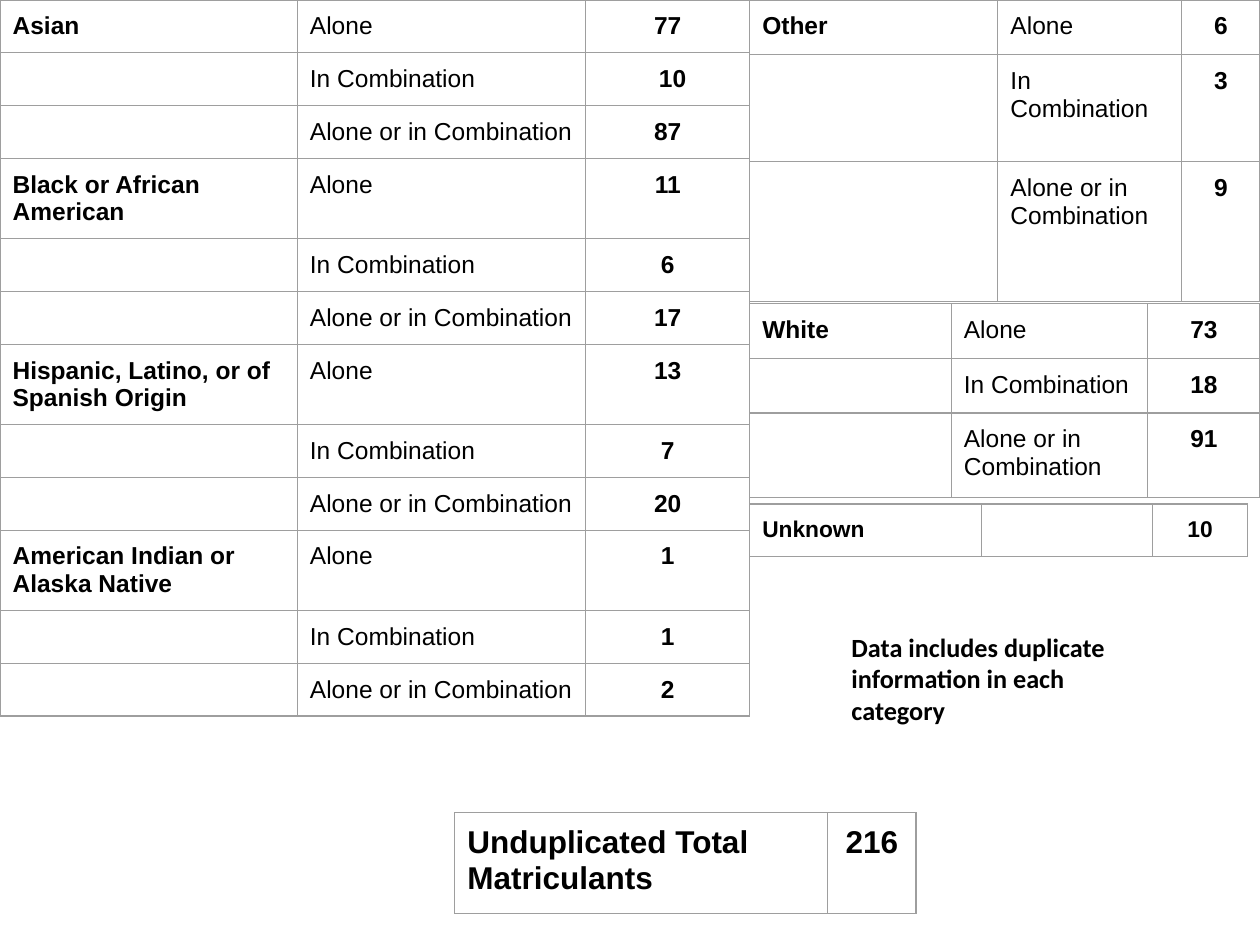
from lxml import etree
from pptx import Presentation
from pptx.dml.color import RGBColor
from pptx.enum.text import MSO_AUTO_SIZE as AutoSize, PP_ALIGN as Align
from pptx.oxml.ns import qn
from pptx.util import Inches, Pt

BLACK = RGBColor(0x00, 0x00, 0x00)
GRAY = RGBColor(0x9E, 0x9E, 0x9E)
KINDS = ["Alone", "In Combination", "Alone or in Combination"]


def group_rows(name, counts):
    """Three rows for one group, named only in the first."""
    return list(zip([name, "", ""], KINDS, counts))


def add_grid(slide, left, top, widths, heights, rows, size):
    """Unfilled table: bold names, plain kinds, bold centred counts."""
    table = slide.shapes.add_table(
        len(heights), len(widths), Inches(left), Inches(top),
        Inches(sum(widths)), Inches(sum(heights))).table
    table.first_row = table.horz_banding = False
    for column, width in zip(table.columns, widths):
        column.width = Inches(width)
    for row, height in zip(table.rows, heights):
        row.height = Inches(height)
    for r, values in enumerate(rows):
        for c, value in enumerate(values):
            cell = table.cell(r, c)
            cell.margin_left = cell.margin_right = Inches(0.1)
            cell.margin_top = cell.margin_bottom = Inches(0.1)
            # Borders come before the fill in the cell properties
            properties = cell._tc.get_or_add_tcPr()
            for side in ("a:lnL", "a:lnR", "a:lnT", "a:lnB"):
                line = etree.SubElement(properties, qn(side), w=str(Pt(0.75)))
                paint = etree.SubElement(line, qn("a:solidFill"))
                etree.SubElement(paint, qn("a:srgbClr"), val=str(GRAY))
            cell.fill.background()
            cell.text = value
            para = cell.text_frame.paragraphs[0]
            para.alignment = Align.CENTER if c == 2 else Align.LEFT
            para.font.name = "Arial"
            para.font.size = Pt(size)
            para.font.bold = c != 1
            para.font.color.rgb = BLACK
            if not value:
                # Keeps an empty cell from stretching its row
                para._p.get_or_add_endParaRPr().set("sz", str(size * 100))
    return table


deck = Presentation()
deck.slide_width, deck.slide_height = Inches(10), Inches(7.5)
page = deck.slides.add_slide(deck.slide_layouts[6])

# Left table: four groups
left_rows = (
    group_rows("Asian", ["77", "10", "87"])
    + group_rows("Black or African American", ["11", "6", "17"])
    + group_rows("Hispanic, Latino, or of Spanish Origin", ["13", "7", "20"])
    + group_rows("American Indian or Alaska Native", ["1", "1", "2"])
)
left_heights = [0.41] * 3 + [0.62, 0.41, 0.41] * 3
left_table = add_grid(page, 0, 0, [2.36, 2.29, 1.3], left_heights, left_rows, 14)

# The second count sits slightly right of centre
offset_cell = left_table.cell(1, 2)
offset_cell.margin_left = Inches(0.58)
offset_cell.text_frame.paragraphs[0].alignment = Align.LEFT

# Note on duplicates
box = page.shapes.add_textbox(Inches(6.66), Inches(4.91), Inches(2.44), Inches(0.96))
frame = box.text_frame
frame.word_wrap = True
frame.auto_size = AutoSize.SHAPE_TO_FIT_TEXT
frame.margin_left = frame.margin_right = Inches(0.1)
frame.margin_top = frame.margin_bottom = Inches(0.1)
note = frame.paragraphs[0]
note.text = "Data includes duplicate information in each category"
note.font.name = "Calibri"
note.font.size = Pt(15)
note.font.bold = True
note.font.color.rgb = BLACK

# Total, with its label across two columns
total = add_grid(page, 3.61, 6.45, [1.7, 1.26, 0.7], [0.8],
                 [("Unduplicated Total Matriculants", "", "216")], 18)
total.cell(0, 0).merge(total.cell(0, 1))

# Right tables
add_grid(page, 5.95, 0, [1.97, 1.46, 0.62], [0.42, 0.85, 1.11],
         group_rows("Other", ["6", "3", "9"]), 14)
add_grid(page, 5.95, 2.41, [1.6, 1.56, 0.89], [0.43, 0.43, 0.67],
         group_rows("White", ["73", "18", "91"]), 14)
add_grid(page, 5.95, 4, [1.84, 1.36, 0.75], [0.42],
         [("Unknown", "", "10")], 13)

deck.save("out.pptx")
